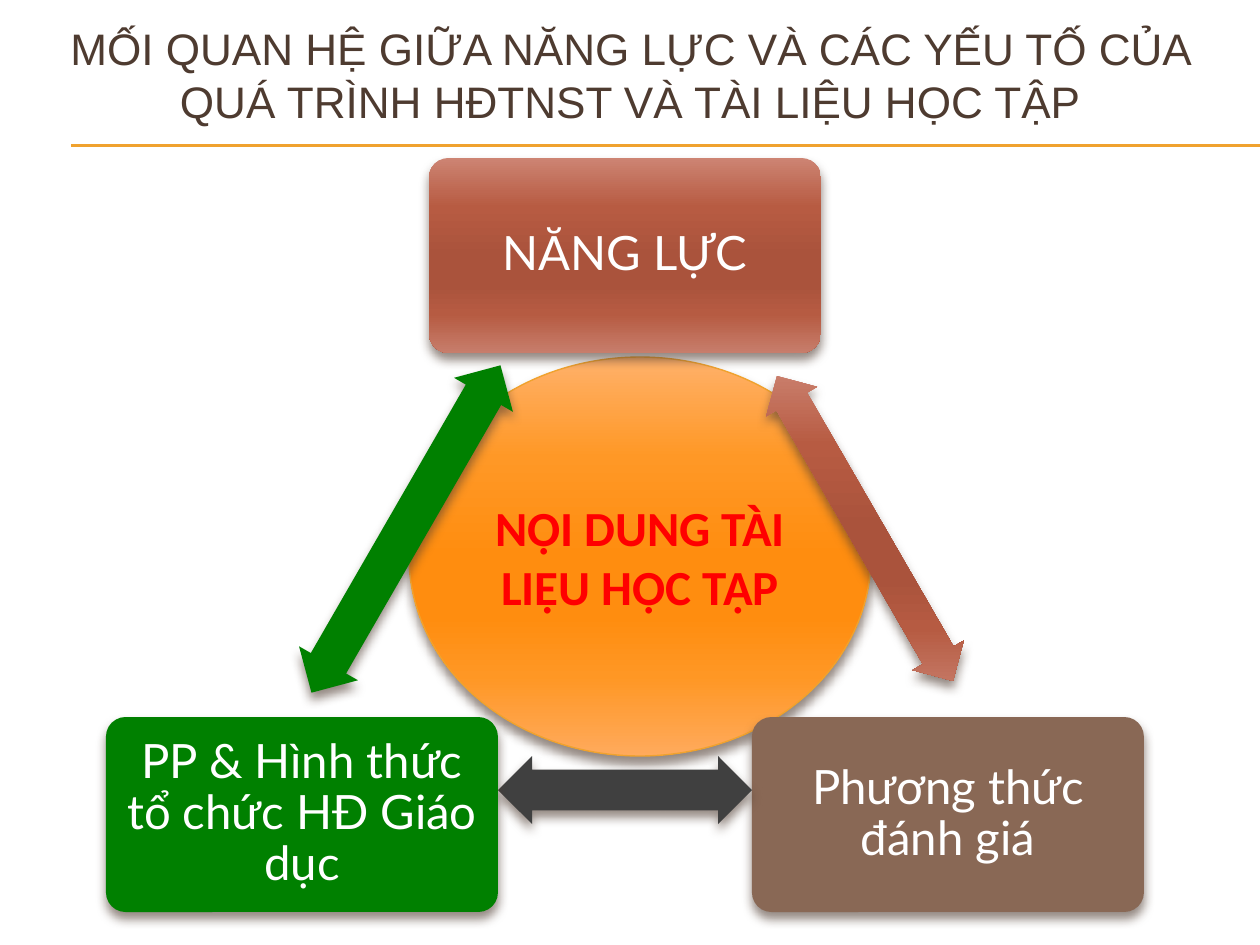
from lxml.etree import SubElement
from pptx import Presentation
from pptx.dml.color import RGBColor
from pptx.enum.shapes import MSO_CONNECTOR, MSO_SHAPE as Shape
from pptx.enum.text import MSO_ANCHOR, PP_ALIGN
from pptx.oxml.ns import qn
from pptx.util import Emu, Pt

PX_PER_INCH = 126
BROWN, GOLD, GREEN, WHITE = "4E3B30", "F0A22E", "008000", "FFFFFF"
STOPS = (0, 25, 50, 65, 80, 100)
RUST = ("CD8473", "B75B42", "AA533C", "AA533C", "B65B42", "C77D6B")
ORANGE = ("FFB16A", "FF9826", "FF8D0F", "FF8D0F", "FF9724", "FFAA5C")


def px(length):
    return Emu(round(length * 914400 / PX_PER_INCH))


def color(hex_text):
    return RGBColor.from_string(hex_text)


class Painter:
    def __init__(self, page):
        self.page = page

    def rule(self, left, right, top):
        line = self.page.shapes.add_connector(
            MSO_CONNECTOR.STRAIGHT, px(left), px(top), px(right), px(top))
        line.line.color.rgb = color(GOLD)
        line.line.width = Pt(0.75)
        SubElement(line._element.spPr, qn("a:effectLst"))

    def label(self, box, text, font, size, ink, inset, bold=False, spacing=1.0):
        frame = box.text_frame
        frame.word_wrap = True
        frame.vertical_anchor = MSO_ANCHOR.MIDDLE
        frame.margin_left = frame.margin_right = px(inset[0])
        frame.margin_top = frame.margin_bottom = px(inset[1])
        frame.text = text
        para = frame.paragraphs[0]
        para.alignment = PP_ALIGN.CENTER
        para.line_spacing = spacing
        for span in para.runs:
            span.font.name = font
            span.font.size = Pt(size)
            span.font.bold = bold
            span.font.color.rgb = color(ink)

    def title(self, text, area):
        box = self.page.shapes.add_textbox(*map(px, area))
        self.label(box, text, "Arial", 25.2, BROWN, (12, 6))

    def shape(self, kind, area, paint, outline=None):
        box = self.page.shapes.add_shape(kind, *map(px, area))
        if isinstance(paint, str):
            box.fill.solid()
            box.fill.fore_color.rgb = color(paint)
        else:
            self.gradient(box, paint)
        if outline:
            box.line.color.rgb = color(outline)
            box.line.width = Pt(0.79)
        else:
            box.line.fill.background()
        self.shadow(box)
        return box

    def gradient(self, box, paints):
        box.fill.gradient()
        box.fill.gradient_angle = 270
        fill = box._element.spPr.find(qn("a:gradFill"))
        fill.set("rotWithShape", "0")
        stops = fill.find(qn("a:gsLst"))
        for stop in list(stops):
            stops.remove(stop)
        for place, paint in zip(STOPS, paints):
            stop = SubElement(stops, qn("a:gs"), pos=str(place * 1000))
            SubElement(stop, qn("a:srgbClr"), val=paint)

    def shadow(self, box):
        box.shadow.inherit = False
        effects = box._element.spPr.find(qn("a:effectLst"))
        drop = SubElement(effects, qn("a:outerShdw"), blurRad=str(Pt(6)),
                          dist=str(Pt(4)), dir="5400000", rotWithShape="0")
        tint = SubElement(drop, qn("a:srgbClr"), val=BROWN)
        SubElement(tint, qn("a:alpha"), val="60000")

    def card(self, text, left, top, paint):
        box = self.shape(Shape.ROUNDED_RECTANGLE, (left, top, 392, 195), paint)
        box.adjustments[0] = 0.1
        self.label(box, text, "Lato", 27, WHITE, (14, 14), spacing=0.9)

    def arrow(self, area, angle, paint):
        box = self.shape(Shape.LEFT_RIGHT_ARROW, area, paint)
        box.adjustments[0] = 0.6
        box.adjustments[1] = 0.5
        box.rotation = angle

    def core(self, text, area):
        box = self.shape(Shape.OVAL, area, ORANGE, GOLD)
        self.label(box, text, "Calibri", 28, "FF0000", (12, 6), bold=True)


def main():
    deck = Presentation()
    deck.slide_width, deck.slide_height = px(1260), px(945)
    page = deck.slides.add_slide(deck.slide_layouts[6])
    painter = Painter(page)

    # Double rule under the heading
    for top in (145, 146):
        painter.rule(71, 1260, top)

    # Centre and heading
    painter.core("NỘI DUNG TÀI LIỆU HỌC TẬP", (409, 357, 462, 399))
    painter.title("MỐI QUAN HỆ GIỮA NĂNG LỰC VÀ CÁC YẾU TỐ CỦA "
                  "QUÁ TRÌNH HĐTNST VÀ TÀI LIỆU HỌC TẬP", (32, 16, 1197, 116))

    # Triangle of cards, each followed by the arrow to the next
    painter.card("NĂNG LỰC", 429, 158, RUST)
    painter.arrow((689, 499, 352, 59), 60, RUST)
    painter.card("Phương thức đánh giá", 752, 717, "896855")
    painter.arrow((498, 756, 254, 68), 180, "404040")
    painter.card("PP & Hình thức tổ chức HĐ Giáo dục", 106, 717, GREEN)
    painter.arrow((217, 495, 378, 68), 300, GREEN)

    deck.save("out.pptx")


if __name__ == "__main__":
    main()
